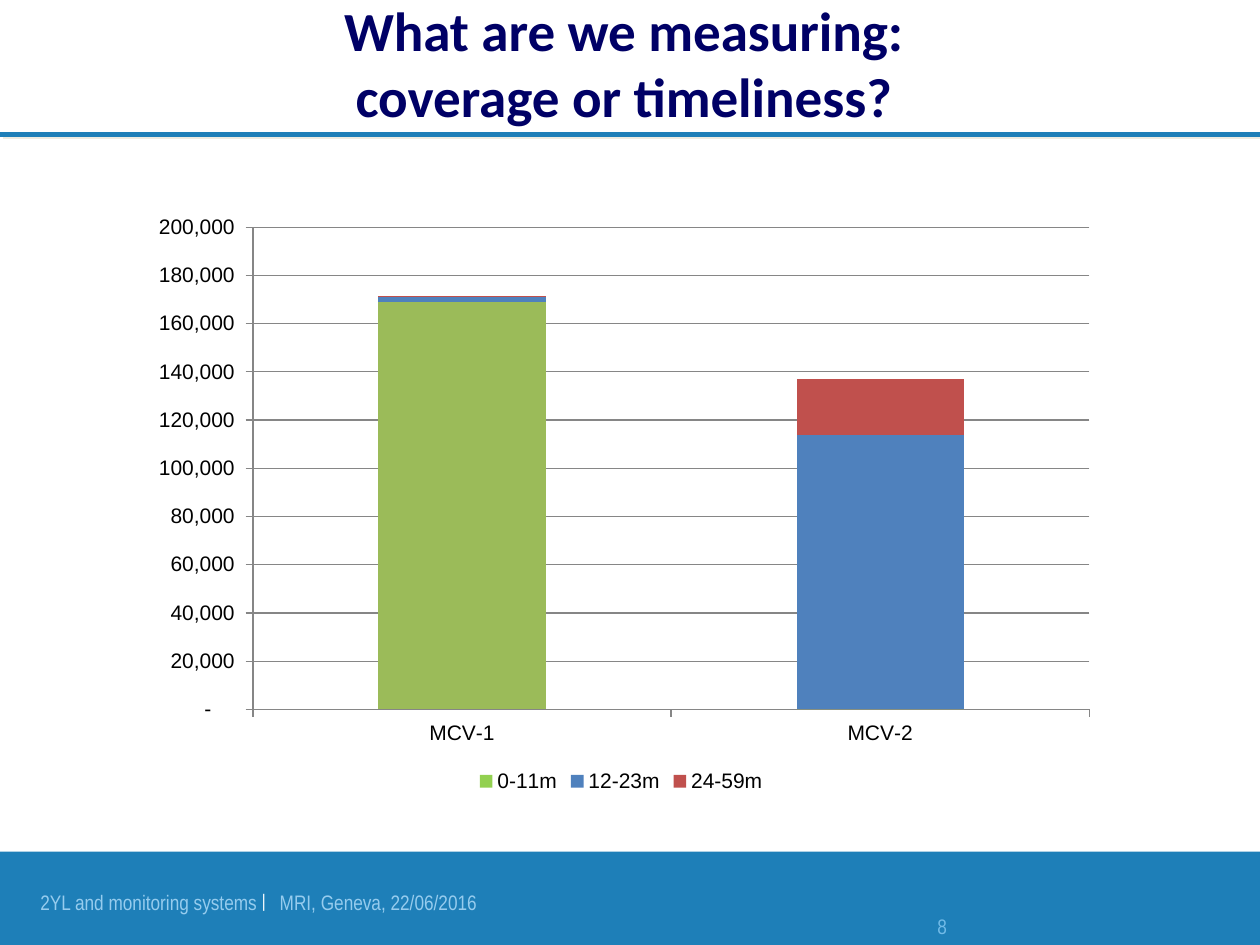
"""Build the slide on measles vaccine coverage and timeliness."""
from lxml import etree
from pptx import Presentation
from pptx.chart.data import CategoryChartData
from pptx.dml.color import RGBColor
from pptx.enum.chart import XL_CHART_TYPE as CT, XL_LEGEND_POSITION as LP, XL_TICK_MARK as TM
from pptx.enum.shapes import MSO_CONNECTOR as MC, MSO_SHAPE as MS
from pptx.enum.text import MSO_ANCHOR as MA, PP_ALIGN as PA
from pptx.oxml import parse_xml
from pptx.oxml.ns import nsdecls, qn
from pptx.util import Inches, Pt


def rgb(value):
    return RGBColor.from_string(value)


def shadow_xml(color, dist, angle):
    return parse_xml(
        f'<a:effectLst {nsdecls("a")}><a:outerShdw dist="{Pt(dist)}" dir="{angle * 60000}" algn="ctr" '
        f'rotWithShape="0"><a:srgbClr val="{color}"/></a:outerShdw></a:effectLst>')


def add_run(p, text, size=12, color="96CCEE", font="Arial Narrow", bold=False, raised=0, shadow=None):
    r = p.add_run()
    r.text = text
    r.font.size, r.font.bold, r.font.name = Pt(size), bold, font
    r.font.color.rgb = rgb(color)
    rpr = r.font._element
    if raised:
        rpr.set("baseline", str(raised * 1000))
    if shadow:
        rpr.find(qn("a:solidFill")).addnext(shadow_xml(*shadow))


class Deck:
    blue = "1E7FB8"
    grey = "868686"

    def __init__(self, prs):
        self.s = prs.slides.add_slide(prs.slide_layouts[6])

    def rule(self, y, width, shadow):
        ln = self.s.shapes.add_connector(MC.STRAIGHT, 0, Inches(y), Inches(10), Inches(y))
        ln.line.color.rgb, ln.line.width = rgb(self.blue), Pt(width)
        ln._element.spPr.append(shadow_xml(*shadow))

    def band(self, x, y, w, h):
        sp = self.s.shapes.add_shape(MS.RECTANGLE, *map(Inches, (x, y, w, h)))
        sp.shadow.inherit = False
        sp.fill.solid()
        sp.fill.fore_color.rgb = rgb(self.blue)
        sp.line.fill.background()

    def text(self, x, y, w, h, anchor=MA.TOP, align=PA.LEFT, tab=None):
        tf = self.s.shapes.add_textbox(*map(Inches, (x, y, w, h))).text_frame
        tf.word_wrap, tf.vertical_anchor = True, anchor
        tf.margin_left = tf.margin_right = tf.margin_top = tf.margin_bottom = 0
        p = tf.paragraphs[0]
        p.alignment = align
        if tab:
            tabs = etree.SubElement(p._p.get_or_add_pPr(), qn("a:tabLst"))
            etree.SubElement(tabs, qn("a:tab"), pos=str(Inches(tab)), algn="l")
        return p

    def chart(self, x, y, w, h, cats, series, number_format):
        data = CategoryChartData()
        data.categories = cats
        for name, values, _ in series:
            data.add_series(name, values)
        chart = self.s.shapes.add_chart(CT.COLUMN_STACKED, *map(Inches, (x, y, w, h)), data).chart
        chart.font.size, chart.font.name = Pt(12), "Arial"
        chart.font.color.rgb = rgb("000000")
        chart.has_title = False
        chart.has_legend = True
        chart.legend.position, chart.legend.include_in_layout = LP.BOTTOM, False
        plot = chart.plots[0]
        plot.gap_width, plot.overlap, plot.vary_by_categories = 150, 100, False
        for ser, (_, _, color) in zip(plot.series, series):
            ser.format.fill.solid()
            ser.format.fill.fore_color.rgb = rgb(color)
        axis = chart.value_axis
        axis.minimum_scale, axis.maximum_scale, axis.major_unit = 0, 200000, 20000
        axis.tick_labels.number_format = number_format
        axis.tick_labels.number_format_is_linked = False
        axis.has_major_gridlines = True
        for part in (axis, chart.category_axis, axis.major_gridlines):
            part.format.line.color.rgb = rgb(self.grey)
            part.format.line.width = Pt(0.75)
        for ax in (axis, chart.category_axis):
            ax.major_tick_mark = TM.OUTSIDE
        return plot


def main():
    prs = Presentation()
    prs.slide_width, prs.slide_height = Inches(10), Inches(7.5)
    deck = Deck(prs)
    deck.rule(1.07, 3, ("EEECE1", 2.2, 27))
    deck.band(0, 6.76, 10, 0.77)

    footer = deck.text(0.32, 6.98, 6.49, 0.47, tab=1.9)
    add_run(footer, "2YL and monitoring systems ")
    add_run(footer, "|", size=18, color="FFFFFF", raised=12)
    add_run(footer, "\tMRI, Geneva, 22/06/2016")
    add_run(deck.text(7.44, 7.25, 0.31, 0.36), "8", color="72BBE8")

    title = deck.text(0, 0, 10, 0.99, anchor=MA.MIDDLE, align=PA.CENTER)
    style = dict(size=31.5, color="000066", font="Calibri", bold=True, shadow=("96CCEE", 2, 45))
    add_run(title, "What are we measuring: ", **style)
    title.add_line_break()
    add_run(title, "coverage or timeliness? ", **style)

    plot = deck.chart(1.06, 1.62, 7.74, 4.71, ["MCV-1", "MCV-2"], [
        ("0-11m", (169000, 0), "92D050"),
        ("12-23m", (2000, 114000), "4F81BD"),
        ("24-59m", (500, 23000), "C0504D"),
    ], '_-* #,##0_-;\\-* #,##0_-;_-* "-"??_-;_-@_')
    fill = plot.series[0].points[0].format.fill
    fill.solid()
    fill.fore_color.rgb = rgb("9BBB59")
    prs.save("out.pptx")


if __name__ == "__main__":
    main()
